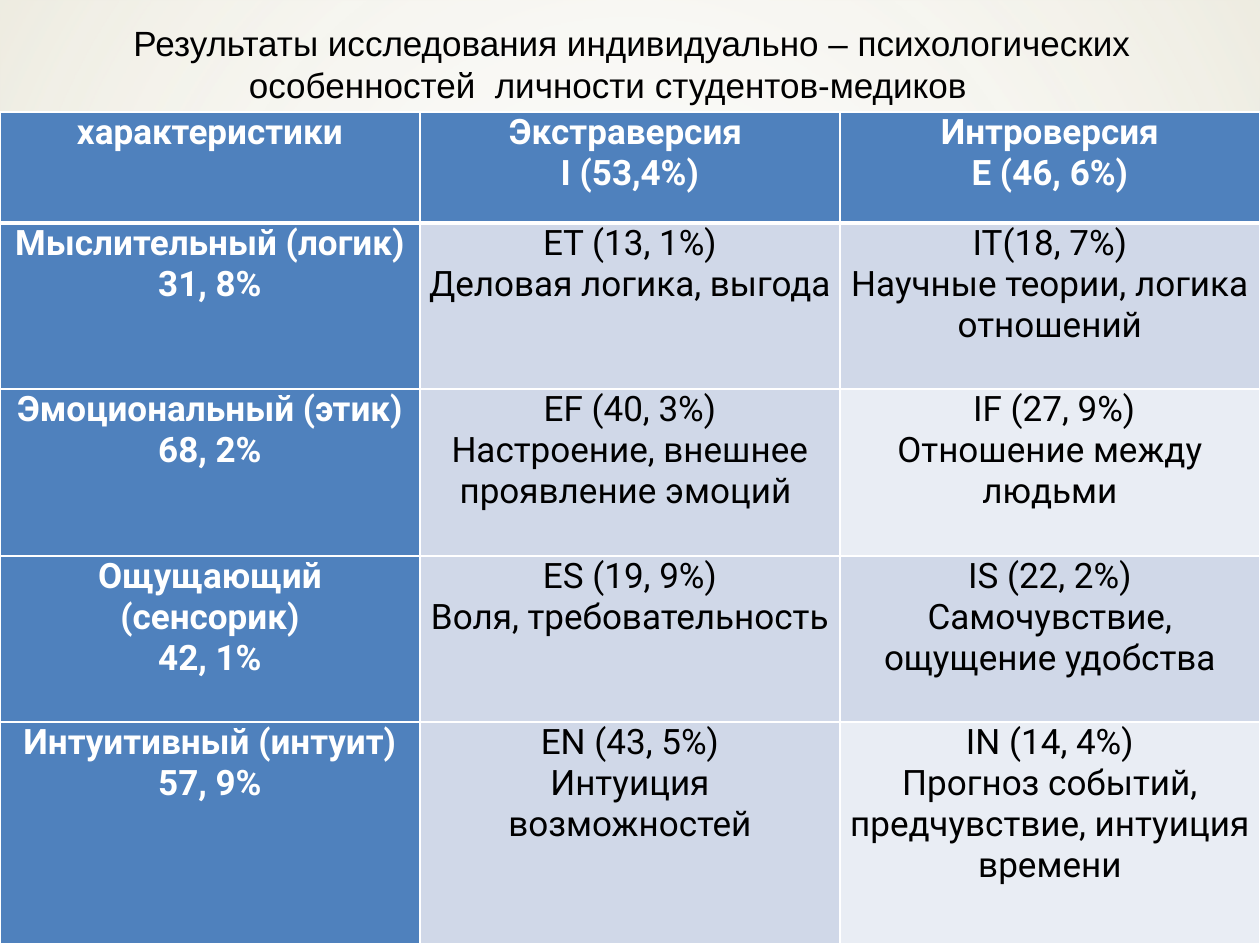
from dataclasses import dataclass

from lxml import etree
from pptx import Presentation
from pptx.dml.color import RGBColor
from pptx.enum.shapes import MSO_SHAPE
from pptx.enum.text import MSO_ANCHOR, PP_ALIGN
from pptx.oxml.ns import qn
from pptx.util import Emu, Pt

PX_PER_INCH = 126
SLIDE_WIDTH, SLIDE_HEIGHT = 1260, 945
RECTANGLE = MSO_SHAPE.RECTANGLE
CENTER = PP_ALIGN.CENTER
TOP, MIDDLE = MSO_ANCHOR.TOP, MSO_ANCHOR.MIDDLE

WHITE = RGBColor(0xFF, 0xFF, 0xFF)
BLACK = RGBColor(0x00, 0x00, 0x00)
CREAM = RGBColor(0xEE, 0xEC, 0xE1)
BLUE = RGBColor(0x4F, 0x81, 0xBD)
MIST = RGBColor(0xD0, 0xD8, 0xE8)
PALE = RGBColor(0xE9, 0xED, 0xF4)


@dataclass(frozen=True)
class GradientStop:
    position: int
    color: RGBColor
    opacity: int


@dataclass(frozen=True)
class TraitRow:
    height: int
    cells: tuple[str, str, str]
    last_fill: RGBColor


GLOW = (
    GradientStop(0, WHITE, 89),
    GradientStop(48, WHITE, 62),
    GradientStop(100, CREAM, 79),
)
TITLE = (
    "Результаты исследования индивидуально – психологических "
    "особенностей  личности студентов-медиков"
)
ROWS = (
    TraitRow(111, ("характеристики", "Экстраверсия \nI (53,4%)",
                   "Интроверсия\nE (46, 6%)"), BLUE),
    TraitRow(166, ("Мыслительный (логик)\n31, 8%",
                   "ET (13, 1%)\nДеловая логика, выгода ",
                   "IT(18, 7%)\nНаучные теории, логика отношений"), MIST),
    TraitRow(167, ("Эмоциональный (этик)\n68, 2%",
                   "EF (40, 3%)\nНастроение, внешнее проявление эмоций ",
                   " IF (27, 9%)\nОтношение между людьми"), PALE),
    TraitRow(166, ("Ощущающий (сенсорик)\n42, 1%",
                   "ES (19, 9%)\nВоля, требовательность",
                   "IS (22, 2%)\nСамочувствие, ощущение удобства"), MIST),
    TraitRow(222, ("Интуитивный (интуит)\n57, 9%",
                   "EN (43, 5%)\nИнтуиция возможностей",
                   "IN (14, 4%)\nПрогноз событий, предчувствие, интуиция времени"),
             PALE),
)


def px(value: int) -> Emu:
    return Emu(round(value * 914400 / PX_PER_INCH))


def set_values(target, values: dict) -> None:
    for name, value in values.items():
        setattr(target, name, value)


def format_text(text_frame, font_name: str, color: RGBColor, bold: bool) -> None:
    for paragraph in text_frame.paragraphs:
        paragraph.alignment = CENTER
        for run in paragraph.runs:
            set_values(run.font, {"name": font_name, "size": Pt(20), "bold": bold})
            run.font.color.rgb = color


def add_glow(slide, height: int, stops: tuple[GradientStop, ...]) -> None:
    shape = slide.shapes.add_shape(RECTANGLE, 0, 0, px(SLIDE_WIDTH), px(height))
    shape.shadow.inherit = False
    shape.line.fill.background()
    shape.fill.gradient()
    gradient = shape._element.spPr.find(qn("a:gradFill"))
    for child in list(gradient):
        gradient.remove(child)
    stop_list = etree.SubElement(gradient, qn("a:gsLst"))
    for stop in stops:
        node = etree.SubElement(stop_list, qn("a:gs"), pos=str(stop.position * 1000))
        color = etree.SubElement(node, qn("a:srgbClr"), val=str(stop.color))
        etree.SubElement(color, qn("a:alpha"), val=str(stop.opacity * 1000))
    circle = etree.SubElement(gradient, qn("a:path"), path="circle")
    center = {side: "50000" for side in "ltrb"}
    etree.SubElement(circle, qn("a:fillToRect"), **center)


def add_borders(cell, widths: dict[str, int]) -> None:
    properties = cell._tc.get_or_add_tcPr()
    for index, (side, width) in enumerate(widths.items()):
        line = etree.Element(qn(f"a:ln{side}"), w=str(Pt(width)))
        fill = etree.SubElement(line, qn("a:solidFill"))
        etree.SubElement(fill, qn("a:srgbClr"), val=str(WHITE))
        properties.insert(index, line)


def add_trait_table(slide, top: int, rows: tuple[TraitRow, ...]) -> None:
    height = sum(row.height for row in rows)
    table = slide.shapes.add_table(
        len(rows), 3, 0, px(top), px(SLIDE_WIDTH), px(height)
    ).table
    set_values(table, {"first_row": False, "horz_banding": False})
    for column in table.columns:
        column.width = px(SLIDE_WIDTH // 3)
    for row_index, row in enumerate(rows):
        table.rows[row_index].height = px(row.height)
        for column_index, text in enumerate(row.cells):
            cell = table.cell(row_index, column_index)
            is_heading = row_index == 0 or column_index == 0
            cell.text = text
            set_values(cell, {
                "margin_left": px(9), "margin_right": px(9),
                "margin_top": 0, "margin_bottom": 0, "vertical_anchor": TOP,
            })
            format_text(cell.text_frame, "Roboto",
                        WHITE if is_heading else BLACK, is_heading)
            cell.fill.solid()
            cell.fill.fore_color.rgb = (
                BLUE if is_heading else (MIST, row.last_fill)[column_index - 1]
            )
            add_borders(cell, {
                "L": 1, "R": 1,
                "T": 3 if row_index == 1 else 1,
                "B": 3 if row_index == 0 else 1,
            })


def add_title(slide, text: str) -> None:
    box = slide.shapes.add_textbox(0, px(15), px(1216), px(97))
    set_values(box.text_frame, {
        "word_wrap": True, "vertical_anchor": MIDDLE, "text": text,
    })
    format_text(box.text_frame, "Arial", BLACK, False)
    paragraph_properties = box.text_frame.paragraphs[0]._p.get_or_add_pPr()
    paragraph_properties.set("indent", str(px(48)))


def main() -> None:
    presentation = Presentation()
    set_values(presentation, {
        "slide_width": px(SLIDE_WIDTH), "slide_height": px(SLIDE_HEIGHT),
    })
    slide = presentation.slides.add_slide(presentation.slide_layouts[6])

    # Backdrop
    slide.background.fill.solid()
    slide.background.fill.fore_color.rgb = CREAM
    add_glow(slide, 703, GLOW)

    # Results table and heading
    add_trait_table(slide, 112, ROWS)
    add_title(slide, TITLE)

    presentation.save("out.pptx")


if __name__ == "__main__":
    main()
